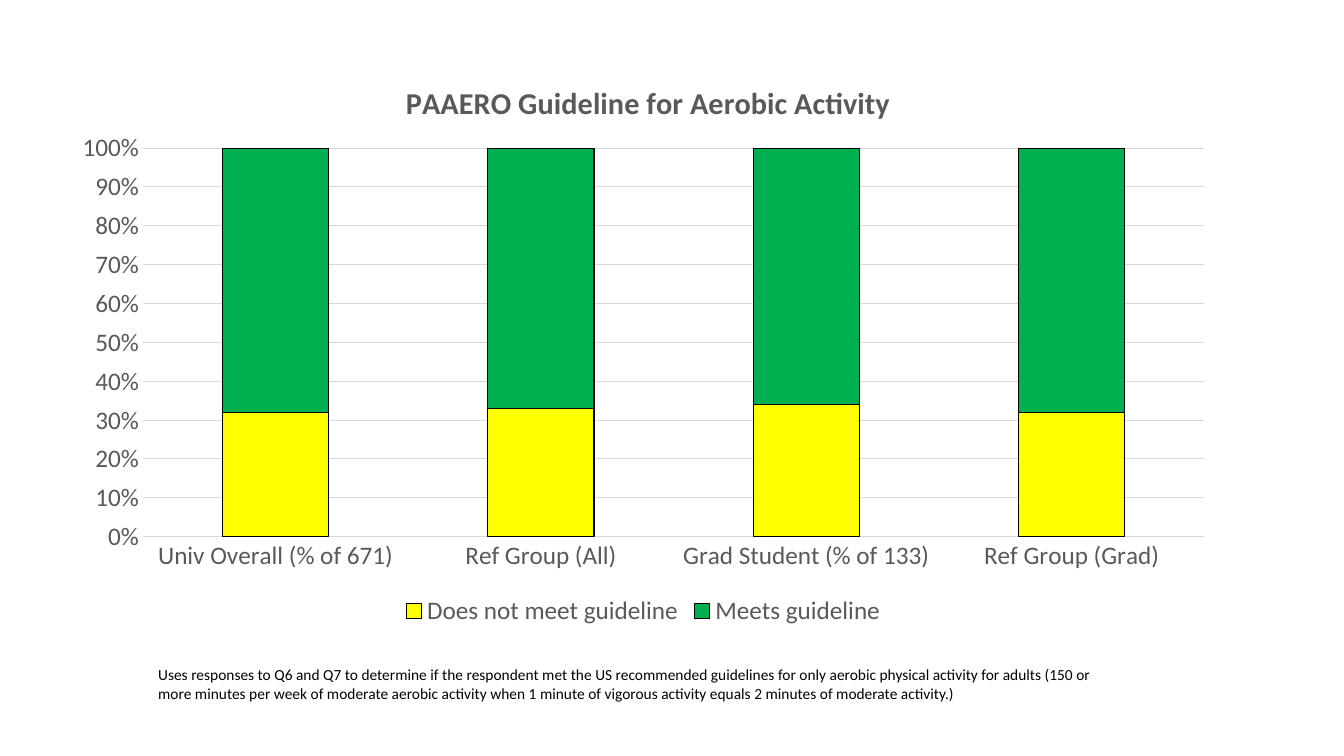
"""Build a slide with a stacked column chart of aerobic activity guideline results."""
from dataclasses import dataclass

from lxml.etree import SubElement
from pptx import Presentation
from pptx.chart.chart import Chart
from pptx.chart.data import CategoryChartData
from pptx.dml.color import RGBColor
from pptx.dml.line import LineFormat
from pptx.enum.chart import XL_CHART_TYPE as ChartType
from pptx.enum.chart import XL_LEGEND_POSITION as LegendPosition
from pptx.enum.chart import XL_TICK_MARK as TickMark
from pptx.oxml.ns import qn
from pptx.oxml.xmlchemy import BaseOxmlElement as Element
from pptx.slide import Slide
from pptx.text.text import Font
from pptx.util import Inches, Length, Pt


@dataclass(frozen=True)
class Theme:
    font: str = "Calibri"
    black: str = "000000"
    grey: str = "595959"
    grid: str = "D9D9D9"
    yellow: str = "FFFF00"
    green: str = "00B050"
    title_size: float = 21.6
    chart_size: float = 18
    note_size: float = 11
    line_width: float = 0.75


@dataclass(frozen=True)
class Area:
    column: float
    row: float
    columns: float
    rows: float

    def place(self) -> tuple[Length, Length, Length, Length]:
        return (
            Length(int(self.column * COLUMN)),
            Length(int(self.row * ROW)),
            Length(int(self.columns * COLUMN)),
            Length(int(self.rows * ROW)),
        )


@dataclass(frozen=True)
class Answer:
    name: str
    shares: tuple[int, ...]
    color: str


THEME = Theme()
WIDTH, HEIGHT = Inches(13.33), Inches(7.5)
COLUMN, ROW = WIDTH / 96, HEIGHT / 54
CHART_AREA = Area(4.25, 3.46, 83.4, 41.62)
NOTE_AREA = Area(10.59, 47.16, 68.7, 3.38)
PLOT_PERCENT = {"x": 7.15, "y": 17.1, "w": 90.9, "h": 66.7}
TITLE_PERCENT = {"x": 29.2, "y": 4.8}

TITLE = "PAAERO Guideline for Aerobic Activity"
GROUPS = (
    "Univ Overall (% of 671)",
    "Ref Group (All)",
    "Grad Student (% of 133)",
    "Ref Group (Grad)",
)
ANSWERS = (
    Answer("Does not meet guideline", (32, 33, 34, 32), THEME.yellow),
    Answer("Meets guideline", (68, 67, 66, 68), THEME.green),
)
NOTE = (
    "Uses responses to Q6 and Q7 to determine if the respondent met the US "
    "recommended guidelines for only aerobic physical activity for adults "
    "(150 or more minutes per week of moderate aerobic activity when 1 minute "
    "of vigorous activity equals 2 minutes of moderate activity.)"
)


def style_font(font: Font, size: float, color: str, bold: bool = False) -> None:
    font.name = THEME.font
    font.size = Pt(size)
    font.bold = bold
    font.color.rgb = RGBColor.from_string(color)


def style_line(line: LineFormat, color: str) -> None:
    line.color.rgb = RGBColor.from_string(color)
    line.width = Pt(THEME.line_width)


def set_layout(
    parent: Element, index: int, percents: dict[str, float], inner: bool = False
) -> None:
    for old in parent.findall(qn("c:layout")):
        parent.remove(old)
    layout = SubElement(parent, qn("c:layout"))
    parent.insert(index, layout)
    manual = SubElement(layout, qn("c:manualLayout"))
    if inner:
        SubElement(manual, qn("c:layoutTarget")).set("val", "inner")
    for side in ("x", "y"):
        SubElement(manual, qn(f"c:{side}Mode")).set("val", "edge")
    for side, percent in percents.items():
        SubElement(manual, qn(f"c:{side}")).set("val", f"{percent / 100:.4f}")


def add_title(chart: Chart) -> None:
    title = chart.chart_title
    span = title.text_frame.paragraphs[0].add_run()
    span.text = TITLE
    style_font(span.font, THEME.title_size, THEME.grey, bold=True)
    set_layout(title.element, 1, TITLE_PERCENT)


def style_axes(chart: Chart) -> None:
    for axis in (chart.category_axis, chart.value_axis):
        axis.major_tick_mark = axis.minor_tick_mark = TickMark.NONE
        style_font(axis.tick_labels.font, THEME.chart_size, THEME.grey)
    style_line(chart.category_axis.format.line, THEME.grid)
    values = chart.value_axis
    values.minimum_scale, values.maximum_scale, values.major_unit = 0, 1, 0.1
    values.format.line.fill.background()
    style_line(values.major_gridlines.format.line, THEME.grid)
    values.tick_labels.number_format = "0%"
    values.tick_labels.number_format_is_linked = False


def add_guideline_chart(page: Slide) -> None:
    data = CategoryChartData()
    data.categories = GROUPS
    for answer in ANSWERS:
        data.add_series(answer.name, answer.shares)
    chart = page.shapes.add_chart(
        ChartType.COLUMN_STACKED_100, *CHART_AREA.place(), data
    ).chart
    style_font(chart.font, THEME.chart_size, THEME.black)
    add_title(chart)
    style_axes(chart)

    plot = chart.plots[0]
    plot.gap_width, plot.overlap, plot.vary_by_categories = 150, 100, False
    for series, answer in zip(plot.series, ANSWERS):
        series.format.fill.solid()
        series.format.fill.fore_color.rgb = RGBColor.from_string(answer.color)
        style_line(series.format.line, THEME.black)

    chart.has_legend = True
    chart.legend.position = LegendPosition.BOTTOM
    chart.legend.include_in_layout = False
    style_font(chart.legend.font, THEME.chart_size, THEME.grey)
    plot_area = chart.element.find(f".//{qn('c:plotArea')}")
    set_layout(plot_area, 0, PLOT_PERCENT, inner=True)


def add_note(page: Slide) -> None:
    box = page.shapes.add_textbox(*NOTE_AREA.place())
    box.text_frame.word_wrap = True
    span = box.text_frame.paragraphs[0].add_run()
    span.text = NOTE
    style_font(span.font, THEME.note_size, THEME.black)


def main() -> None:
    deck = Presentation()
    deck.slide_width, deck.slide_height = WIDTH, HEIGHT
    page = deck.slides.add_slide(deck.slide_layouts[6])
    add_guideline_chart(page)
    add_note(page)
    deck.save("out.pptx")


if __name__ == "__main__":
    main()
